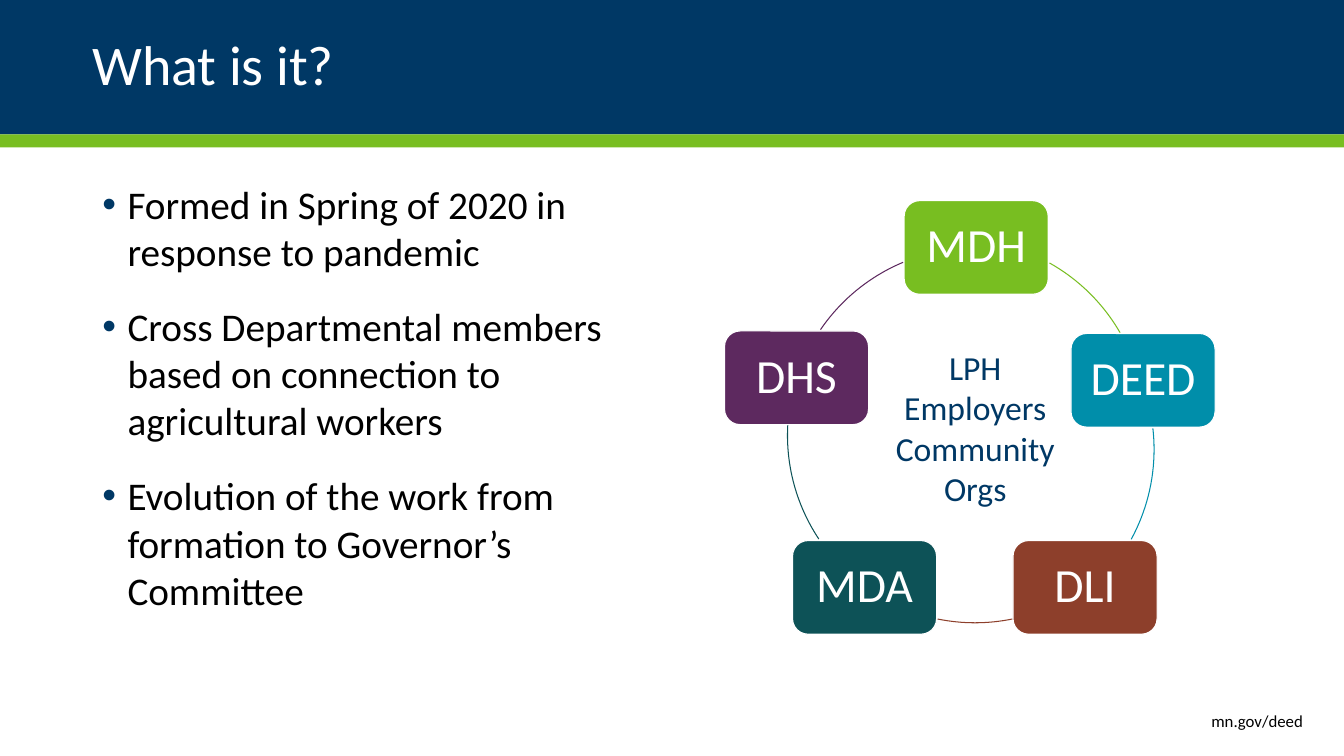
"""Build the slide that explains what the group is."""
from lxml import etree
from pptx import Presentation
from pptx.dml.color import RGBColor
from pptx.enum.shapes import MSO_SHAPE
from pptx.enum.text import MSO_ANCHOR, PP_ALIGN
from pptx.oxml.ns import qn
from pptx.util import Inches, Pt

RECT, ROUND, ARC = MSO_SHAPE.RECTANGLE, MSO_SHAPE.ROUNDED_RECTANGLE, MSO_SHAPE.ARC
LEFT, MID, RIGHT = PP_ALIGN.LEFT, PP_ALIGN.CENTER, PP_ALIGN.RIGHT
TOP, MIDDLE = MSO_ANCHOR.TOP, MSO_ANCHOR.MIDDLE
WIDE, HIGH = Inches(13.333), Inches(7.5)
COLS, ROWS = 160, 90
NAVY, GREEN, WHITE, BLACK = "003865", "78BE21", "FFFFFF", "000000"
NODE = (17.16, 11.16)
RING = (44.64, 44.64)
POINTS = [
    "Formed in Spring of 2020 in response to pandemic",
    "Cross Departmental members based on connection to agricultural workers",
    "Evolution of the work from formation to Governor’s Committee",
]
CORE = ["LPH", "Employers", "Community Orgs"]
CYCLE = [
    ("MDH", GREEN, (107.64, 23.88), (91.7, 28.45), (299.3, 330)),
    ("DEED", "008EAA", (127.5, 39.7), (92.75, 31.2), (353.5, 28.6)),
    ("DLI", "8D3F2B", (120.6, 64.35), (93.75, 29.5), (78.5, 101.5)),
    ("MDA", "0D5257", (94.35, 64.35), (93.75, 29.5), (146.4, 183.1)),
    ("DHS", "5D295F", (86.25, 39.4), (93.8, 29.5), (214.3, 247.3)),
]


def color(text):
    """Turn a hex string into a color."""
    return RGBColor.from_string(text)


def grid(x, y, w, h):
    """Turn columns and rows into slide lengths."""
    return (int(x * WIDE / COLS), int(y * HIGH / ROWS),
            int(w * WIDE / COLS), int(h * HIGH / ROWS))


def write(shape, lines, size, hue, align=LEFT, anchor=TOP):
    """Fill a shape with styled lines and return its frame."""
    frame = shape.text_frame
    frame.text = "\n".join(lines)
    frame.word_wrap = True
    frame.vertical_anchor = anchor
    for para in frame.paragraphs:
        para.alignment = align
        for run in para.runs:
            run.font.name = "Calibri"
            run.font.size = Pt(size)
            run.font.color.rgb = color(hue)
    return frame


def draw(slide, kind, area, fill=None, line=None, width=0.75):
    """Add a preset shape with a plain fill and line."""
    shape = slide.shapes.add_shape(kind, *grid(*area))
    shape.shadow.inherit = False
    if fill:
        shape.fill.solid()
        shape.fill.fore_color.rgb = color(fill)
    else:
        shape.fill.background()
    if line:
        shape.line.color.rgb = color(line)
        shape.line.width = Pt(width)
    else:
        shape.line.fill.background()
    return shape


def label(slide, area, *style):
    """Add a text box with styled lines."""
    return write(slide.shapes.add_textbox(*grid(*area)), *style)


def bullet(para, hue):
    """Give a paragraph a hanging colored bullet."""
    props = para._p.get_or_add_pPr()
    props.set("marL", str(Inches(0.25)))
    props.set("indent", str(-Inches(0.25)))
    tint = etree.SubElement(props, qn("a:buClr"))
    etree.SubElement(tint, qn("a:srgbClr"), val=hue)
    etree.SubElement(props, qn("a:buFont"), typeface="Arial")
    etree.SubElement(props, qn("a:buChar"), char="•")


def header(slide):
    """Place the title over its two bands."""
    title = slide.shapes.title
    title.left, title.top, title.width, title.height = grid(11, 0, 138, 16)
    frame = write(title, ["What is it?"], 40, WHITE, LEFT, MIDDLE)
    frame.margin_left = frame.margin_right = 0
    frame.paragraphs[0].line_spacing = 0.9
    for top, tall, hue in ((0, 16, NAVY), (16, 1.56, GREEN)):
        band = draw(slide, RECT, (0, top, COLS, tall), hue)
        title.element.addprevious(band.element)


def points(slide):
    """List the main points."""
    frame = label(slide, (11, 20.88, 68, 60.12), POINTS, 28, BLACK)
    for rank, para in enumerate(frame.paragraphs):
        bullet(para, NAVY)
        para.space_before = Pt(10 if rank else 0)
        para.space_after = Pt(10)


def cycle(slide):
    """Draw the ring of agencies around its core."""
    for name, hue, spot, ring, angles in CYCLE:
        node = draw(slide, ROUND, spot + NODE, hue, WHITE, 0.85)
        frame = write(node, [name], 34, WHITE, MID, MIDDLE)
        frame.paragraphs[0].line_spacing = 0.9
        arc = draw(slide, ARC, ring + RING, None, hue)
        for rank, angle in enumerate(angles):
            arc.adjustments[rank] = angle * 0.6
    label(slide, (104.3, 40.7, 23.6, 20.6), CORE, 24, NAVY, MID)


def main():
    """Build and save the slide."""
    deck = Presentation()
    deck.slide_width, deck.slide_height = WIDE, HIGH
    slide = deck.slides.add_slide(deck.slide_layouts[5])
    header(slide)
    points(slide)
    label(slide, (83, 83.4, 73.3, 4.8), ["mn.gov/deed"], 12, BLACK, RIGHT, MIDDLE)
    cycle(slide)
    deck.save("out.pptx")


if __name__ == "__main__":
    main()
